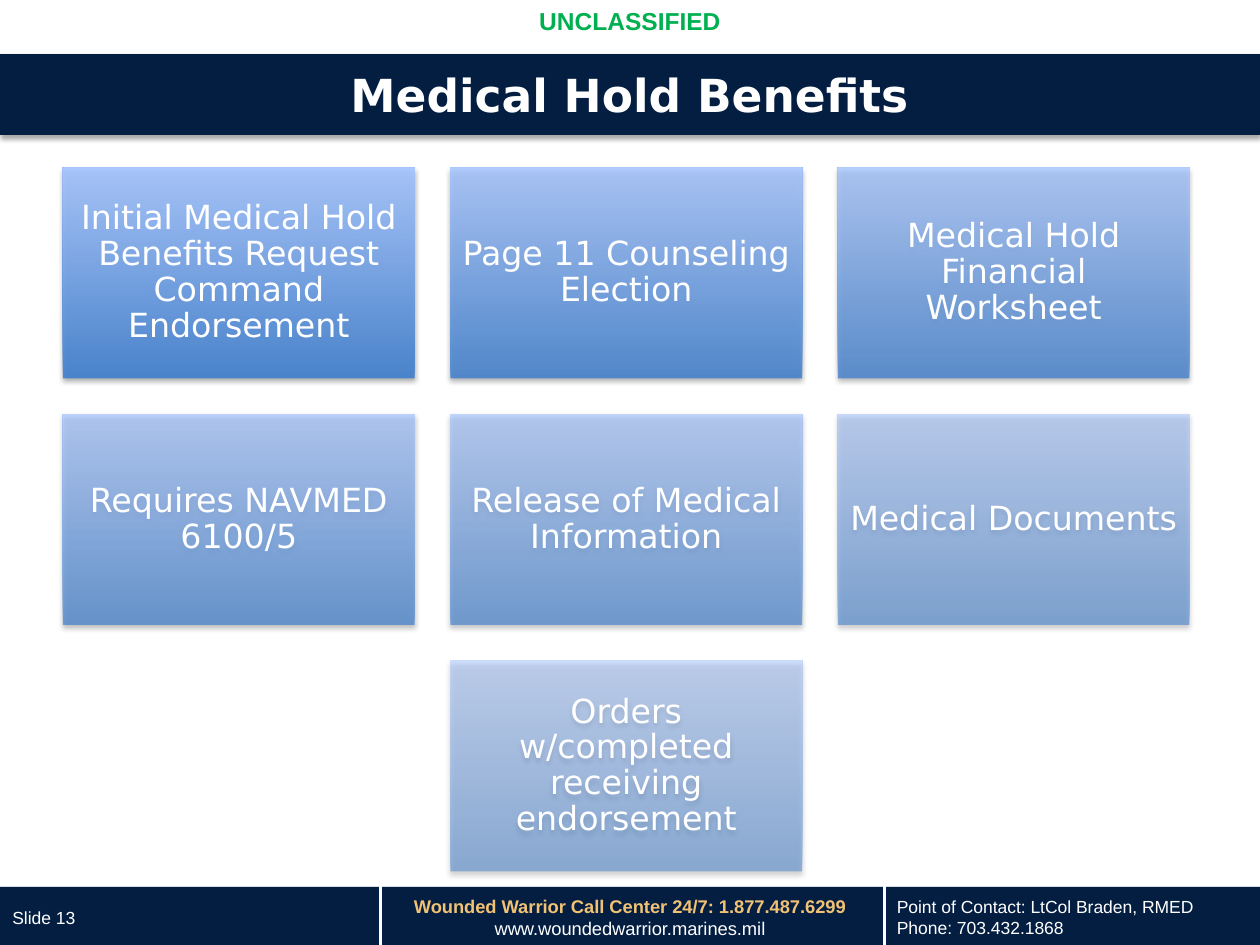
import pptx
import pptx.dml.color
import pptx.enum.shapes
import pptx.enum.text
import pptx.oxml.ns
import pptx.util
from lxml import etree

Cm = pptx.util.Cm
Pt = pptx.util.Pt
qn = pptx.oxml.ns.qn
ALIGN = pptx.enum.text.PP_ALIGN
ANCHOR = pptx.enum.text.MSO_ANCHOR

NAVY, WHITE, GOLD, GREEN = "041E42", "FFFFFF", "F1C274", "00B050"
CARD_BOTTOM, CARD_TOP = "3F7FCE", "A4C4FF"
SLIDE_WIDTH, SLIDE_HEIGHT = 25.4, 19.05
CARDS = [
    "Initial Medical Hold Benefits Request Command Endorsement",
    "Page 11 Counseling Election",
    "Medical Hold Financial Worksheet",
    "Requires NAVMED 6100/5",
    "Release of Medical Information",
    "Medical Documents",
    "Orders w/completed receiving endorsement",
]
COLUMNS = 3
CARD_WIDTH, CARD_HEIGHT, CARD_GAP = 7.09, 4.25, 0.72
GRID_LEFT, GRID_TOP = 1.27, 3.38


def color(value):
    return pptx.dml.color.RGBColor.from_string(value)


class SlideBuilder:
    body_font = "Arial"
    heading_font = "DejaVu Sans"

    def __init__(self, slide):
        self.slide = slide

    def set_lines(self, box, lines, size, font=body_font, align=ALIGN.LEFT,
                  anchor=ANCHOR.MIDDLE, wrap=True):
        """Fill a box with lines, each a (text, colour, bold) tuple."""
        frame = box.text_frame
        frame.word_wrap = wrap
        frame.vertical_anchor = anchor
        frame.text = "\n".join(text for text, _, _ in lines)
        for para, (_, shade, bold) in zip(frame.paragraphs, lines):
            para.alignment = align
            for span in para.runs:
                span.font.name = font
                span.font.size = Pt(size)
                span.font.bold = bold
                span.font.color.rgb = color(shade)

    def text(self, left, top, width, height, lines, size, **style):
        box = self.slide.shapes.add_textbox(Cm(left), Cm(top), Cm(width), Cm(height))
        self.set_lines(box, lines, size, **style)

    def panel(self, left, top, width, height):
        """Add a borderless navy rectangle with a soft shadow below it."""
        shape = self.slide.shapes.add_shape(
            pptx.enum.shapes.MSO_SHAPE.RECTANGLE,
            Cm(left), Cm(top), Cm(width), Cm(height))
        shape.fill.solid()
        shape.fill.fore_color.rgb = color(NAVY)
        shape.line.fill.background()
        shape.shadow.inherit = False
        effects = shape._element.spPr.find(qn("a:effectLst"))
        shadow = etree.SubElement(
            effects, qn("a:outerShdw"), blurRad=str(Pt(3.1)), dist=str(Pt(1.8)),
            dir="5400000", rotWithShape="0")
        black = etree.SubElement(shadow, qn("a:srgbClr"), val="000000")
        etree.SubElement(black, qn("a:alpha"), val="35000")
        return shape

    def card(self, left, top, label, opacity):
        shape = self.panel(left, top, CARD_WIDTH, CARD_HEIGHT)
        shape.fill.gradient()
        shape.fill.gradient_angle = 90
        for stop, shade in zip(shape.fill.gradient_stops, (CARD_BOTTOM, CARD_TOP)):
            stop.color.rgb = color(shade)
        gradient = shape._element.spPr.find(qn("a:gradFill"))
        for shade in gradient.iter(qn("a:srgbClr")):
            etree.SubElement(shade, qn("a:alpha"), val=str(round(opacity * 1000)))
        self.set_lines(shape, [(label, WHITE, False)], 19,
                       font=self.heading_font, align=ALIGN.CENTER)
        frame = shape.text_frame
        frame.margin_left = frame.margin_right = Cm(0.2)
        frame.margin_top = frame.margin_bottom = Cm(0.2)
        frame.paragraphs[0].line_spacing = 0.9

    def divider(self, x, top, bottom):
        line = self.slide.shapes.add_connector(
            pptx.enum.shapes.MSO_CONNECTOR.STRAIGHT, Cm(x), Cm(top), Cm(x), Cm(bottom))
        line.line.color.rgb = color(WHITE)
        line.line.width = Pt(2)
        etree.SubElement(line._element.spPr, qn("a:effectLst"))


def main():
    deck = pptx.Presentation()
    deck.slide_width, deck.slide_height = Cm(SLIDE_WIDTH), Cm(SLIDE_HEIGHT)
    page = SlideBuilder(deck.slides.add_slide(deck.slide_layouts[6]))

    # Footer
    page.panel(0, 17.88, SLIDE_WIDTH, 1.17)
    page.text(7.98, 17.93, 9.45, 1.14, [
        ("Wounded Warrior Call Center 24/7: 1.877.487.6299", GOLD, True),
        ("www.woundedwarrior.marines.mil", WHITE, False),
    ], 10.5, align=ALIGN.CENTER, anchor=ANCHOR.TOP, wrap=False)
    for x in (17.83, 7.67):
        page.divider(x, 17.48, SLIDE_HEIGHT)
    page.text(17.83, 17.93, 7.57, 1.12, [
        ("Point of Contact: LtCol Braden, RMED", WHITE, False),
        ("Phone: 703.432.1868", WHITE, False),
    ], 10)
    page.text(0, 17.98, 5.92, 1.02, [("Slide 13", WHITE, False)], 10)

    # Header
    page.text(0, 0, SLIDE_WIDTH, 0.86, [("UNCLASSIFIED", GREEN, True)], 14,
              align=ALIGN.CENTER, anchor=ANCHOR.TOP)
    title = page.panel(0, 1.09, SLIDE_WIDTH, 1.63)
    page.set_lines(title, [("Medical Hold Benefits", WHITE, True)], 26,
                   font=page.heading_font, align=ALIGN.CENTER)

    # Cards fade from 90 % to 50 % opacity; a lone last card sits in the middle
    last = len(CARDS) - 1
    for index, label in enumerate(CARDS):
        row, column = divmod(index, COLUMNS)
        if index == last:
            column = COLUMNS // 2
        page.card(GRID_LEFT + column * (CARD_WIDTH + CARD_GAP),
                  GRID_TOP + row * (CARD_HEIGHT + CARD_GAP),
                  label, 90 - 40 * index / last)

    deck.save("out.pptx")


if __name__ == "__main__":
    main()
